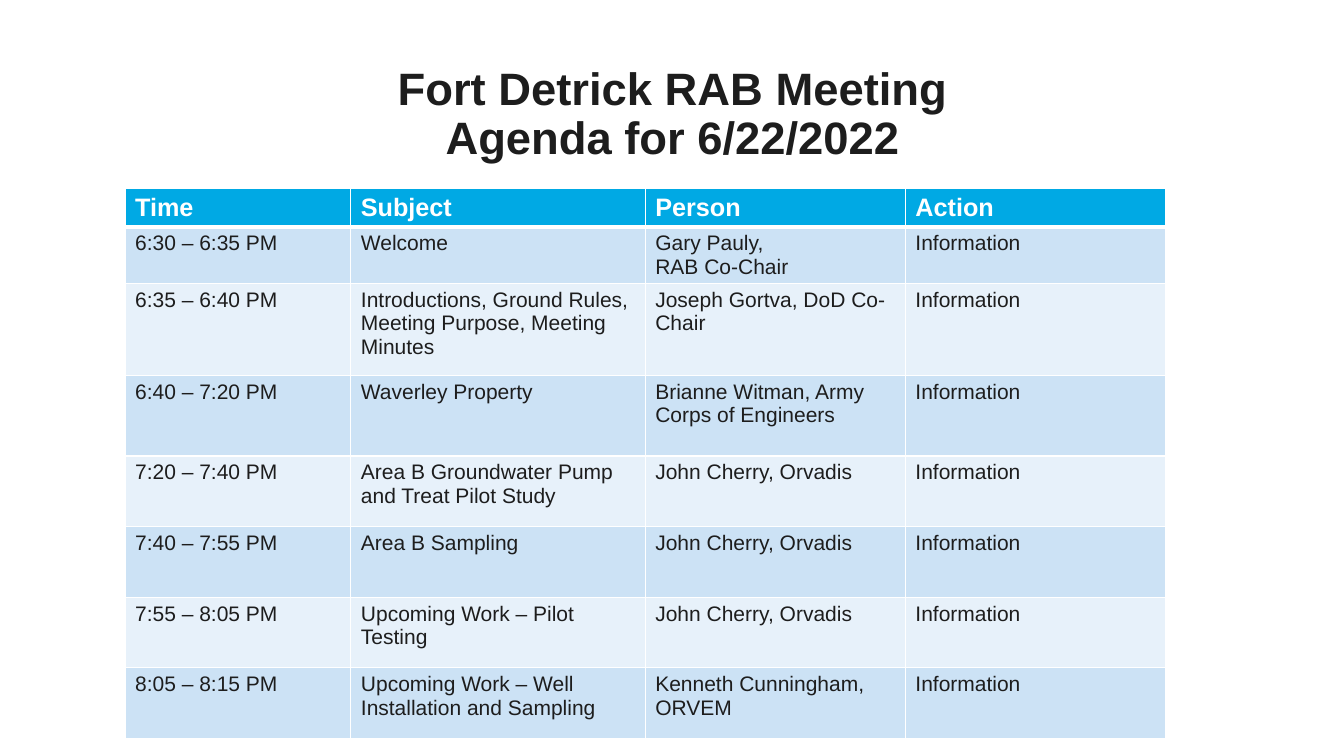
from lxml import etree
from pptx import Presentation
from pptx.dml.color import RGBColor
from pptx.enum import text
from pptx.oxml import ns
from pptx.util import Inches, Pt

TITLE_LINES = ["Fort Detrick RAB Meeting", "Agenda for 6/22/2022"]
HEADINGS = ("Time", "Subject", "Person", "Action")
AGENDA = [
    ("6:30 – 6:35 PM", "Welcome", "Gary Pauly,\nRAB Co-Chair"),
    ("6:35 – 6:40 PM", "Introductions, Ground Rules, Meeting Purpose, Meeting Minutes",
     "Joseph Gortva, DoD Co-Chair"),
    ("6:40 – 7:20 PM", "Waverley Property", "Brianne Witman, Army Corps of Engineers"),
    ("7:20 – 7:40 PM", "Area B Groundwater Pump and Treat Pilot Study", "John Cherry, Orvadis"),
    ("7:40 – 7:55 PM", "Area B Sampling", "John Cherry, Orvadis"),
    ("7:55 – 8:05 PM", "Upcoming Work – Pilot Testing", "John Cherry, Orvadis"),
    ("8:05 – 8:15 PM", "Upcoming Work – Well Installation and Sampling",
     "Kenneth Cunningham, ORVEM"),
]
ACTION = "Information"

COLUMN_WIDTHS = (2.24, 2.92, 2.58, 2.58)
ROW_HEIGHTS = (0.35, 0.53, 0.91, 0.8) + (0.7,) * 4
FONT = "Arial"
INK = RGBColor(0x1D, 0x1D, 0x1D)
WHITE = RGBColor(0xFF, 0xFF, 0xFF)
HEADER_BLUE = RGBColor(0x00, 0xA9, 0xE4)
BANDS = (RGBColor(0xCC, 0xE2, 0xF5), RGBColor(0xE7, 0xF1, 0xFA))


def add_run(paragraph, words, size, color, bold):
    run = paragraph.add_run()
    run.text = words
    run.font.name = FONT
    run.font.size = Pt(size)
    run.font.bold = bold
    run.font.color.rgb = color


def set_borders(cell, top, bottom):
    """Draw white cell borders; top and bottom are widths in points."""
    properties = cell._tc.get_or_add_tcPr()
    for side, width in (("L", 1), ("R", 1), ("T", top), ("B", bottom)):
        line = etree.SubElement(properties, ns.qn(f"a:ln{side}"), w=str(Pt(width)))
        fill = etree.SubElement(line, ns.qn("a:solidFill"))
        etree.SubElement(fill, ns.qn("a:srgbClr"), val=str(WHITE))


def add_title(slide):
    title = slide.shapes.title
    title.left, title.top = Inches(0.79), Inches(0.66)
    title.width, title.height = Inches(11.76), Inches(0.69)
    frame = title.text_frame
    frame.margin_left = frame.margin_right = frame.margin_top = frame.margin_bottom = 0
    frame.word_wrap = True
    frame.auto_size = text.MSO_AUTO_SIZE.NONE
    frame.vertical_anchor = text.MSO_ANCHOR.TOP
    paragraph = frame.paragraphs[0]
    paragraph.alignment = text.PP_ALIGN.CENTER
    paragraph.line_spacing = 0.9
    for index, words in enumerate(TITLE_LINES):
        if index:
            paragraph.add_line_break()
        add_run(paragraph, words, 32.4, INK, True)


def add_agenda(slide):
    rows = [HEADINGS] + [entry + (ACTION,) for entry in AGENDA]
    table = slide.shapes.add_table(
        len(rows), len(HEADINGS), Inches(1.24), Inches(1.87),
        Inches(sum(COLUMN_WIDTHS)), Inches(sum(ROW_HEIGHTS))).table
    for column, width in zip(table.columns, COLUMN_WIDTHS):
        column.width = Inches(width)
    for row_index, (row, height) in enumerate(zip(rows, ROW_HEIGHTS)):
        table.rows[row_index].height = Inches(height)
        is_header = row_index == 0
        for column_index, words in enumerate(row):
            cell = table.cell(row_index, column_index)
            set_borders(cell, 3 if row_index == 1 else 1, 3 if is_header else 1)
            cell.fill.solid()
            cell.fill.fore_color.rgb = HEADER_BLUE if is_header else BANDS[(row_index - 1) % 2]
            frame = cell.text_frame
            for line_index, line in enumerate(words.split("\n")):
                paragraph = frame.add_paragraph() if line_index else frame.paragraphs[0]
                add_run(paragraph, line, 18 if is_header else 15,
                        WHITE if is_header else INK, is_header)


def main():
    presentation = Presentation()
    presentation.slide_width, presentation.slide_height = Inches(13.33), Inches(7.5)
    slide = presentation.slides.add_slide(presentation.slide_layouts[5])
    add_title(slide)
    add_agenda(slide)
    presentation.save("out.pptx")


if __name__ == "__main__":
    main()
